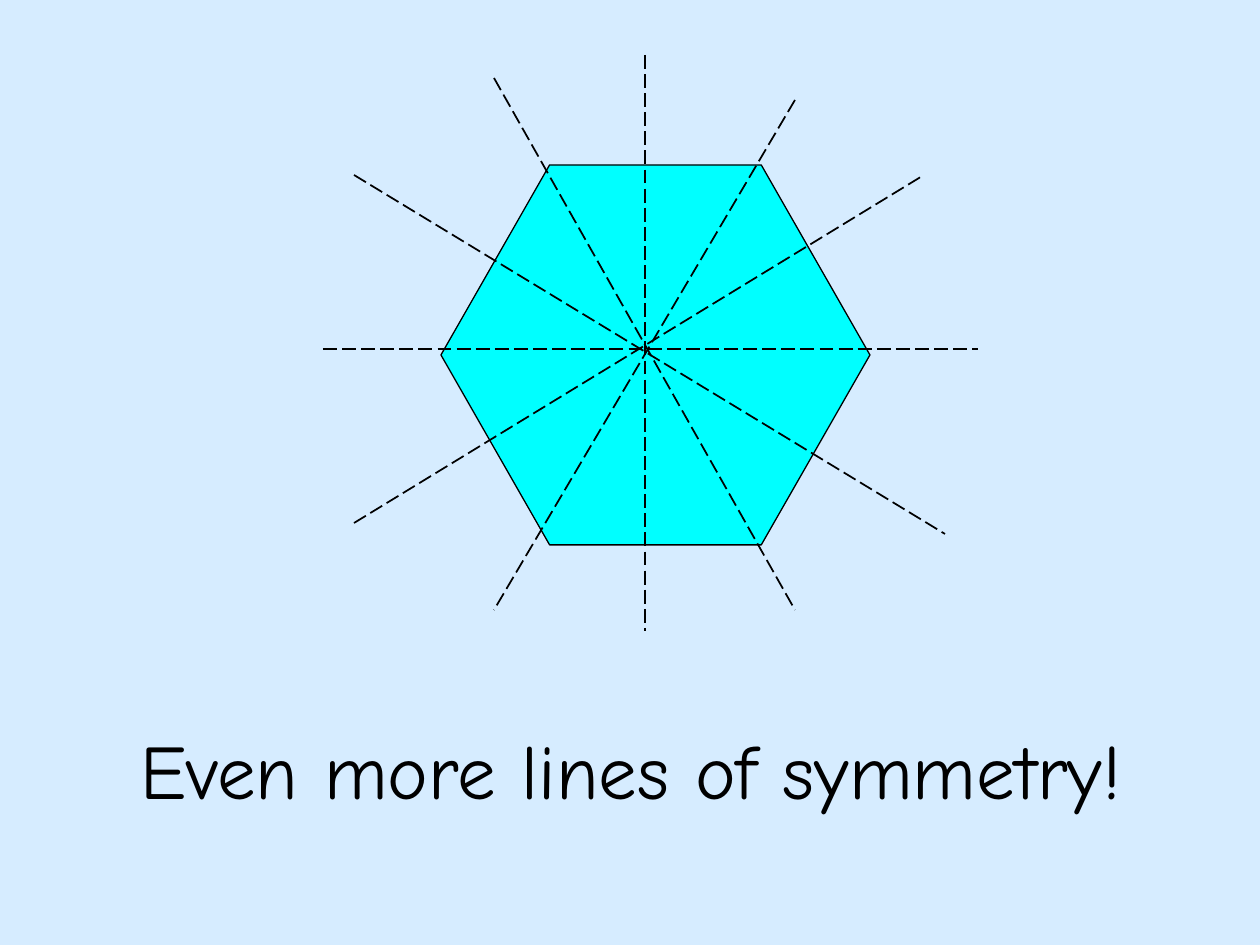
from lxml import etree
from pptx import Presentation
from pptx.dml.color import RGBColor
from pptx.enum.dml import MSO_LINE
from pptx.enum.shapes import MSO_CONNECTOR, MSO_SHAPE
from pptx.enum.text import MSO_ANCHOR, PP_ALIGN
from pptx.oxml.ns import qn
from pptx.util import Emu, Pt

HEXAGON = MSO_SHAPE.HEXAGON
STRAIGHT = MSO_CONNECTOR.STRAIGHT
LONG_DASH = MSO_LINE.LONG_DASH
MIDDLE = MSO_ANCHOR.MIDDLE
CENTER = PP_ALIGN.CENTER

PX_PER_INCH = 126
SLIDE_SIZE = (1260, 945)

SYMMETRY_LINES = [
    (323, 349, 978, 349),
    (645, 55, 645, 631),
    (354, 175, 945, 534),
    (354, 523, 924, 175),
    (795, 100, 494, 610),
    (494, 78, 795, 610),
]


def px(length):
    return Emu(round(length * 914400 / PX_PER_INCH))


def color(hex_string):
    return RGBColor.from_string(hex_string)


class SymmetrySlide:
    font = "Comic Neue"
    ink = "000000"
    background = "D6ECFF"
    hexagon_fill = "00FFFF"

    def __init__(self, presentation):
        self.slide = presentation.slides.add_slide(presentation.slide_layouts[6])
        fill = self.slide.background.fill
        fill.solid()
        fill.fore_color.rgb = color(self.background)
        self.figure = None

    def start_figure(self):
        """Open the group that holds the hexagon and its lines."""
        self.figure = self.slide.shapes.add_group_shape()

    def add_title(self, text, *box):
        shape = self.slide.shapes.add_textbox(*map(px, box))
        frame = shape.text_frame
        frame.word_wrap = True
        frame.vertical_anchor = MIDDLE
        paragraph = frame.paragraphs[0]
        paragraph.text = text
        paragraph.alignment = CENTER
        paragraph.font.name = self.font
        paragraph.font.size = Pt(44)
        paragraph.font.color.rgb = color(self.ink)

    def add_hexagon(self, *box):
        shape = self.figure.shapes.add_shape(HEXAGON, *map(px, box))
        shape.adjustments[0] = 0.286
        shape.shadow.inherit = False
        shape.fill.solid()
        shape.fill.fore_color.rgb = color(self.hexagon_fill)
        shape.line.color.rgb = color(self.ink)
        shape.line.width = Pt(0.75)

    def add_symmetry_line(self, *ends):
        connector = self.figure.shapes.add_connector(STRAIGHT, *map(px, ends))
        connector.line.color.rgb = color(self.ink)
        connector.line.width = Pt(1)
        connector.line.dash_style = LONG_DASH
        etree.SubElement(connector._element.spPr, qn("a:effectLst"))


def main():
    presentation = Presentation()
    presentation.slide_width, presentation.slide_height = map(px, SLIDE_SIZE)
    page = SymmetrySlide(presentation)
    page.add_title("Even more lines of symmetry!", 64, 690, 1134, 158)
    page.start_figure()
    page.add_hexagon(441, 165, 429, 380)
    for ends in SYMMETRY_LINES:
        page.add_symmetry_line(*ends)
    presentation.save("out.pptx")


if __name__ == "__main__":
    main()
